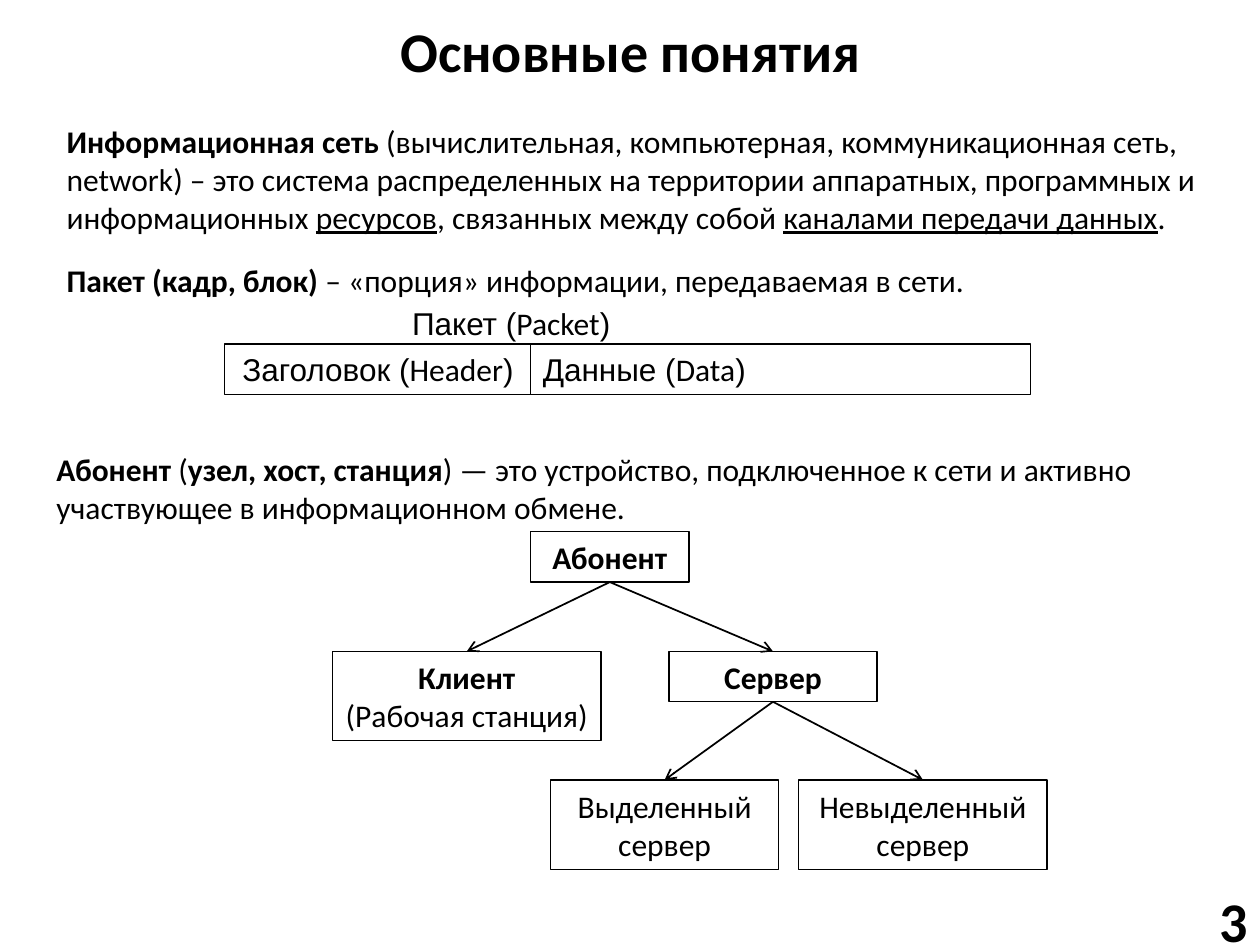
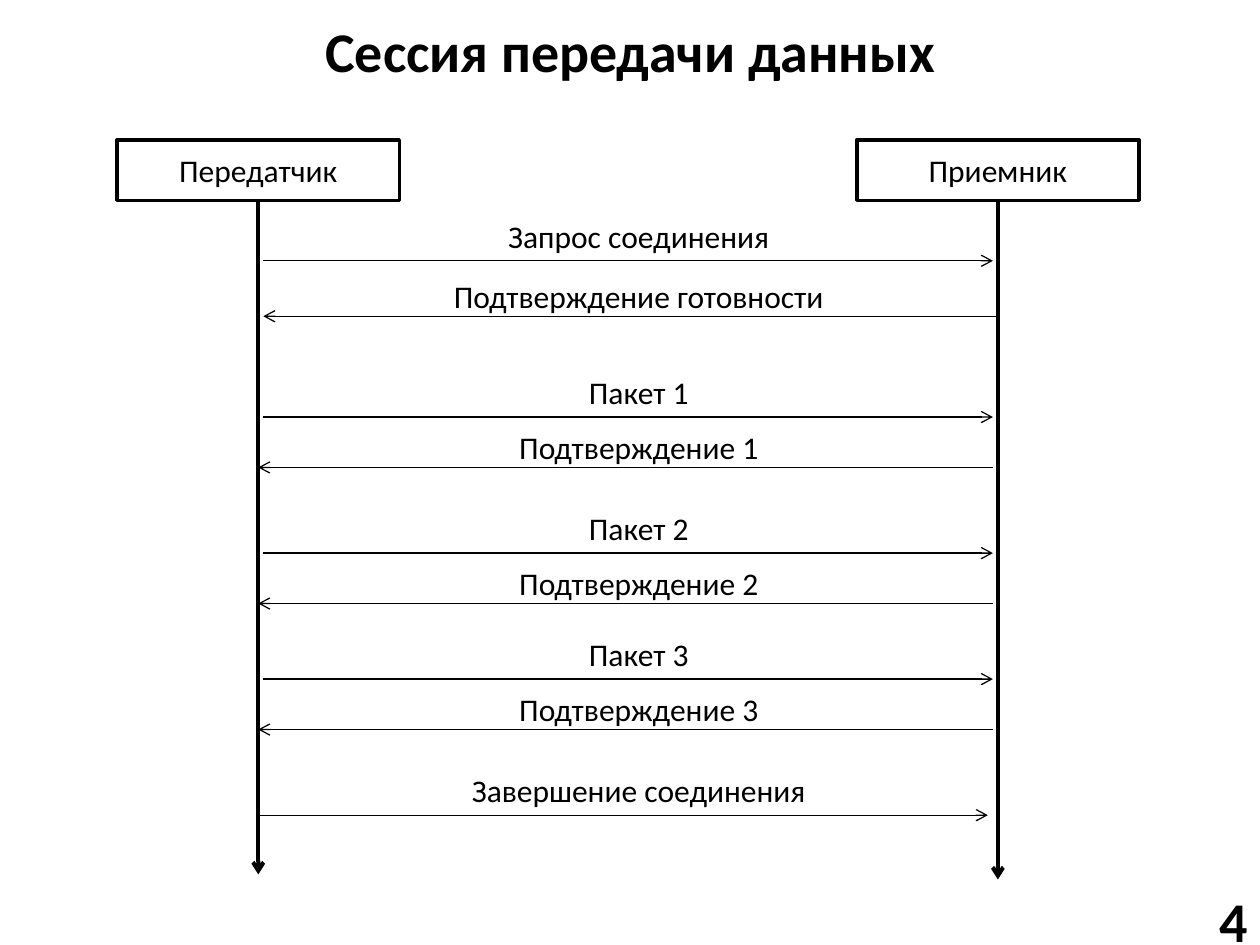
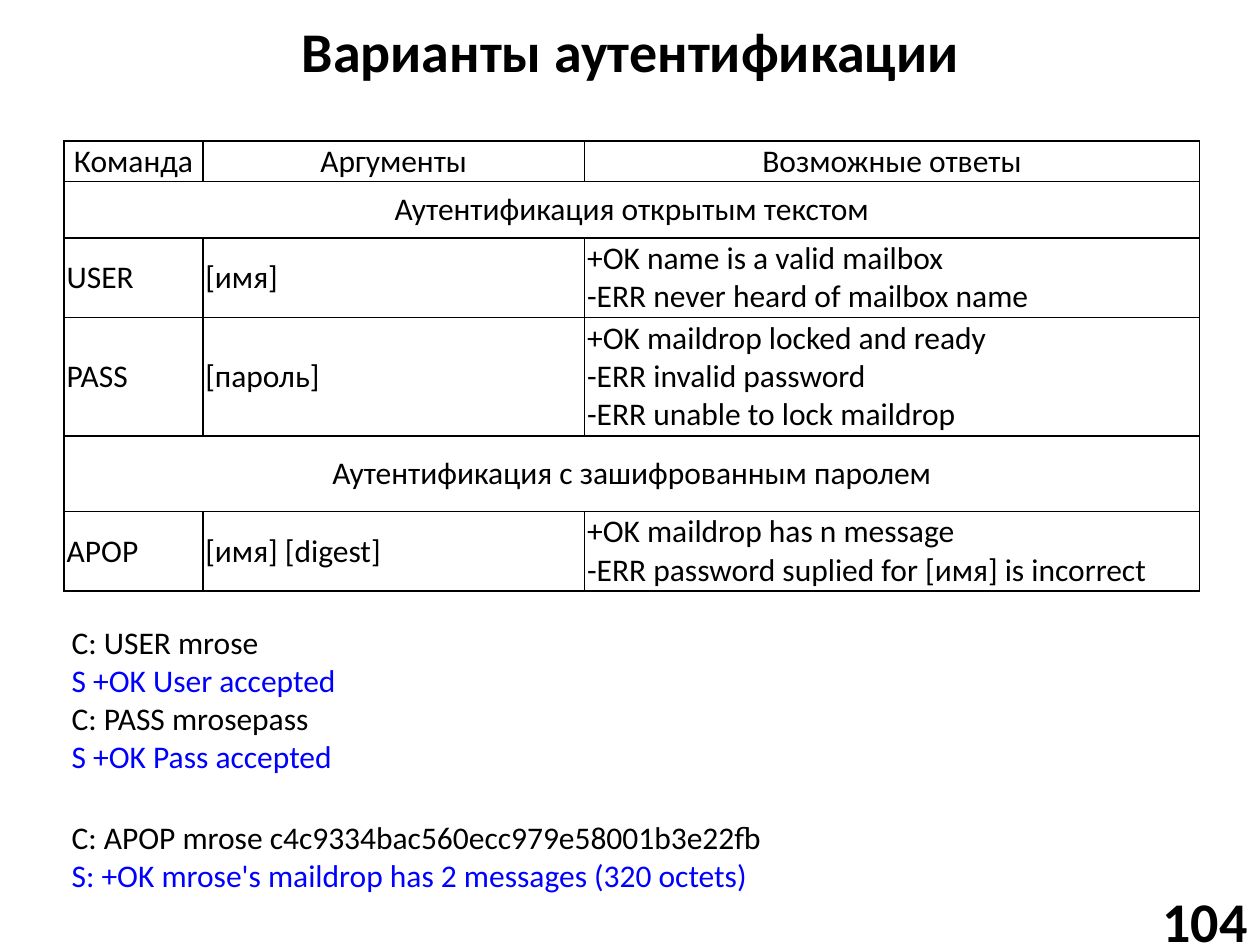
"""Builds three slides on networks: terms, a transfer session and authentication."""
from dataclasses import dataclass

from lxml.etree import SubElement
from pptx import Presentation
from pptx.dml.color import RGBColor
from pptx.enum.shapes import MSO_CONNECTOR, MSO_SHAPE
from pptx.enum.text import MSO_ANCHOR, PP_ALIGN
from pptx.oxml.ns import qn
from pptx.util import Inches, Pt


@dataclass(frozen=True)
class Theme:
    ink: str = "000000"
    paper: str = "FFFFFF"
    reply: str = "0000FF"
    font: str = "Calibri"
    alt_font: str = "Arial"
    body: int = 18
    heading: int = 32
    thin: float = 0.75
    arrow: float = 1
    thick: float = 2
    lifeline: float = 2.25


T = Theme()
LEFT, CENTER, RIGHT = PP_ALIGN.LEFT, PP_ALIGN.CENTER, PP_ALIGN.RIGHT
TOP, MIDDLE = MSO_ANCHOR.TOP, MSO_ANCHOR.MIDDLE
STYLES = {
    "plain": {},
    "bold": {"bold": True},
    "under": {"underline": True},
    "alt": {"name": T.alt_font},
    "reply": {"color": T.reply},
    "heading": {"size": T.heading, "bold": True},
}
TITLE_AT = (0.28, 0.05, 9.45, 0.69)
NUMBER_AT = (8.86, 7.1, 1.14, 0.4)

DEFINITIONS = [
    ((0.43, 0.92, 9.21, 1.01), [
        ("Информационная сеть ", "bold"),
        ("(вычислительная, компьютерная, коммуникационная сеть, network) – это система "
         "распределенных на территории аппаратных, программных и информационных ", "plain"),
        ("ресурсов", "under"),
        (", связанных между собой ", "plain"),
        ("каналами передачи данных", "under"),
        (".", "plain")]),
    ((0.43, 2.02, 9.06, 0.4), [
        ("Пакет (кадр, блок) ", "bold"),
        ("– «порция» информации, передаваемая в сети.", "plain")]),
    ((0.35, 3.52, 9.06, 0.71), [
        ("Абонент", "bold"), (" (", "plain"), ("узел, хост, станция", "bold"),
        (") — это устройство, подключенное к сети и активно участвующее в "
         "информационном обмене.", "plain")]),
]
PACKET_LABEL = ("Пакет", "Packet", (3.27, 2.41, 1.65, 0.28))
PACKET_PARTS = [
    ("Заголовок", "Header", (1.78, 2.73, 2.44, 0.4), CENTER),
    ("Данные", "Data", (4.21, 2.73, 3.97, 0.4), LEFT),
]
NODES = {
    "subscriber": ((4.21, 4.22, 1.26, 0.4), [[("Абонент", "bold")]]),
    "client": ((2.64, 5.17, 2.13, 0.71), [[("Клиент", "bold")], [("(Рабочая станция)", "plain")]]),
    "server": ((5.31, 5.17, 1.65, 0.4), [[("Сервер", "bold")]]),
    "dedicated": ((4.37, 6.19, 1.81, 0.71), [[("Выделенный сервер", "plain")]]),
    "shared": ((6.34, 6.19, 1.97, 0.71), [[("Невыделенный сервер", "plain")]]),
}
BRANCHES = [("subscriber", "client"), ("subscriber", "server"),
            ("server", "dedicated"), ("server", "shared")]

PEERS = [("Передатчик", 0.93, 6.94), ("Приемник", 6.8, 6.98)]
PEER_TOP, PEER_W, PEER_H = 1.11, 2.24, 0.48
MESSAGE_CENTER = 5.07
PACKET_LINES = [3.31, 4.39, 5.39]
REPLY_GAP = 0.4
MESSAGES = [
    ("Запрос соединения", 2.3, 2.07, 2.09, 7.88),
    ("Подтверждение готовности", 3.17, 2.51, 7.91, 2.09),
    ("Завершение соединения", 2.88, 6.47, 2.05, 7.84),
]
for number, line_y in enumerate(PACKET_LINES, 1):
    MESSAGES += [(f"Пакет {number}", 1, line_y, 2.09, 7.88),
                 (f"Подтверждение {number}", 2.12, line_y + REPLY_GAP, 7.88, 2.05)]

COMMAND_AT = (0.51, 1.12, 9.01, 3.57)
COMMAND_COLS = [1.1, 3.03, 4.88]
COMMAND_ROWS = [
    (0.32, ["Команда", "Аргументы", "Возможные ответы"]),
    (0.45, ["Аутентификация открытым текстом"]),
    (0.63, ["USER", "[имя]", "+OK name is a valid mailbox\n-ERR never heard of mailbox name"]),
    (0.94, ["PASS", "[пароль]", "+OK maildrop locked and ready\n-ERR invalid password\n"
            "-ERR unable to lock maildrop"]),
    (0.6, ["Аутентификация с зашифрованным паролем"]),
    (0.63, ["APOP", "[имя] [digest]", "+OK maildrop has n message\n"
            "-ERR password suplied for [имя] is incorrect"]),
]
DIALOGUES = [
    ((0.47, 4.89, 9.1, 1.31), ["C: USER mrose", "S +OK User accepted",
                               "C: PASS mrosepass", "S +OK Pass accepted"]),
    ((0.47, 6.44, 9.06, 0.71), ["C: APOP mrose c4c9334bac560ecc979e58001b3e22fb",
                                "S: +OK mrose's maildrop has 2 messages (320 octets)"]),
]


def inches(values):
    return [Inches(v) for v in values]


def write(tf, paragraphs, align=LEFT, anchor=TOP, wrap=True, insets=None):
    tf.word_wrap, tf.vertical_anchor = wrap, anchor
    if insets is not None:
        for side in ("left", "top", "right", "bottom"):
            setattr(tf, f"margin_{side}", Inches(insets))
    for i, runs in enumerate(paragraphs):
        p = tf.add_paragraph() if i else tf.paragraphs[0]
        p.alignment = align
        for text, style in runs:
            r = p.add_run()
            r.text = text
            look = {"name": T.font, "size": T.body, "color": T.ink, **STYLES[style]}
            r.font.color.rgb = RGBColor.from_string(look.pop("color"))
            look["size"] = Pt(look["size"])
            for key, value in look.items():
                setattr(r.font, key, value)


def add_text(shapes, at, paragraphs, **layout):
    write(shapes.add_textbox(*inches(at)).text_frame, paragraphs, **layout)


def add_box(shapes, at, paragraphs, width=T.thin, align=CENTER, filled=True):
    sp = shapes.add_shape(MSO_SHAPE.RECTANGLE, *inches(at))
    sp.shadow.inherit = False
    if filled:
        sp.fill.solid()
        sp.fill.fore_color.rgb = RGBColor.from_string(T.paper)
    else:
        sp.fill.background()
    sp.line.color.rgb = RGBColor.from_string(T.ink)
    sp.line.width = Pt(width)
    write(sp.text_frame, paragraphs, align=align, anchor=MIDDLE)
    return sp


def add_arrow(shapes, start, end, width):
    line = shapes.add_connector(MSO_CONNECTOR.STRAIGHT, *inches(start + end))
    line.line.color.rgb = RGBColor.from_string(T.ink)
    line.line.width = Pt(width)
    SubElement(line.line._get_or_add_ln(), qn("a:tailEnd"), type="arrow")
    SubElement(line._element.spPr, qn("a:effectLst"))
    return line


def add_slide(prs, title, number):
    s = prs.slides.add_slide(prs.slide_layouts[5])
    sp = s.shapes.title
    sp.left, sp.top, sp.width, sp.height = inches(TITLE_AT)
    write(sp.text_frame, [[(title, "heading")]], align=CENTER, anchor=MIDDLE)
    add_text(s.shapes, NUMBER_AT, [[(number, "heading")]], align=RIGHT, anchor=MIDDLE)
    return s.shapes


def bilingual(name, english):
    return [[(f"{name} (", "alt"), (english, "plain"), (")", "alt")]]


def build_terms(prs):
    shapes = add_slide(prs, "Основные понятия", "3")
    for at, runs in DEFINITIONS:
        add_text(shapes, at, [runs])
    packet = shapes.add_group_shape().shapes
    for name, english, at, align in PACKET_PARTS:
        add_box(packet, at, bilingual(name, english), align=align)
    name, english, at = PACKET_LABEL
    add_text(packet, at, bilingual(name, english), insets=0)
    boxes = {key: add_box(shapes, at, lines, filled=False) for key, (at, lines) in NODES.items()}
    for parent, child in BRANCHES:
        line = add_arrow(shapes, (0, 0), (1, 1), T.arrow)
        line.begin_connect(boxes[parent], 2)
        line.end_connect(boxes[child], 0)


def build_session(prs):
    shapes = add_slide(prs, "Сессия передачи данных", "4")
    for name, left, bottom in PEERS:
        box = add_box(shapes, (left, PEER_TOP, PEER_W, PEER_H), [[(name, "plain")]], T.thick)
        x = left + PEER_W / 2
        line = add_arrow(shapes, (x, PEER_TOP + PEER_H), (x, bottom), T.lifeline)
        line.begin_connect(box, 2)
    for text, width, y, start, end in MESSAGES:
        add_arrow(shapes, (start, y), (end, y), T.thin)
        lift = 0.4 if start < end else 0.36
        add_text(shapes, (MESSAGE_CENTER - width / 2, y - lift, width, 0.4),
                 [[(text, "plain")]], align=CENTER, wrap=False)


def style_cell(cell):
    cell.margin_left = cell.margin_right = Inches(0.02)
    cell.margin_top = cell.margin_bottom = Inches(0.01)
    cell.vertical_anchor = MIDDLE
    tcPr = cell._tc.get_or_add_tcPr()
    for side in ("lnL", "lnR", "lnT", "lnB"):
        ln = SubElement(tcPr, qn(f"a:{side}"), w=str(Pt(T.arrow)))
        SubElement(SubElement(ln, qn("a:solidFill")), qn("a:srgbClr"), val=T.ink)
    cell.fill.background()


def build_authentication(prs):
    shapes = add_slide(prs, "Варианты аутентификации", "104")
    table = shapes.add_table(len(COMMAND_ROWS), len(COMMAND_COLS), *inches(COMMAND_AT)).table
    table.first_row = table.horz_banding = False
    for col, width in zip(table.columns, COMMAND_COLS):
        col.width = Inches(width)
    for cell in table.iter_cells():
        style_cell(cell)
    for i, (height, texts) in enumerate(COMMAND_ROWS):
        table.rows[i].height = Inches(height)
        is_section = len(texts) == 1
        if is_section:
            table.cell(i, 0).merge(table.cell(i, len(COMMAND_COLS) - 1))
        for j, text in enumerate(texts):
            lines = [[(line, "plain")] for line in text.split("\n")]
            write(table.cell(i, j).text_frame, lines, anchor=MIDDLE,
                  align=CENTER if i == 0 or is_section else LEFT)
    for at, lines in DIALOGUES:
        add_text(shapes, at, [[(line, "reply" if line.startswith("S") else "plain")]
                              for line in lines], anchor=MIDDLE)


def main():
    prs = Presentation()
    prs.slide_width, prs.slide_height = Inches(10), Inches(7.5)
    for build in (build_terms, build_session, build_authentication):
        build(prs)
    prs.save("out.pptx")


if __name__ == "__main__":
    main()
